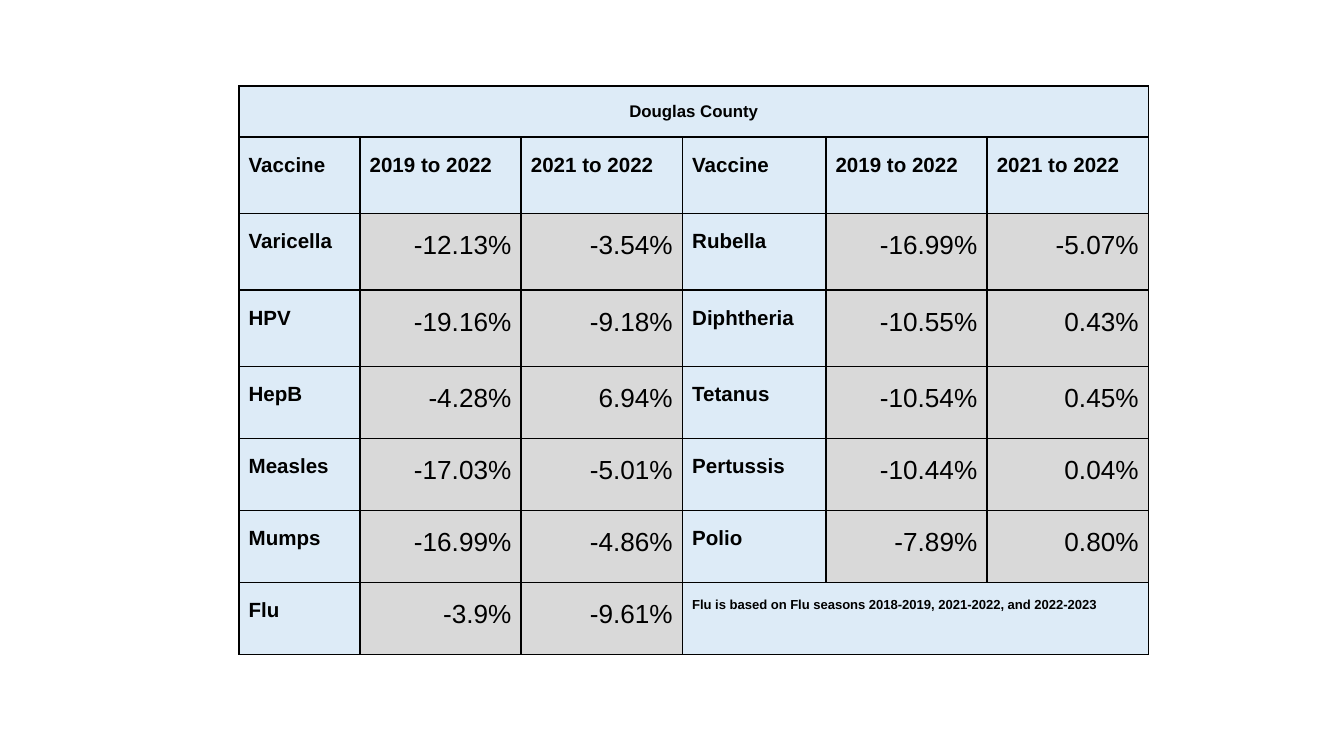
from lxml.etree import SubElement
from pptx import Presentation
from pptx.dml.color import RGBColor
from pptx.enum.text import MSO_ANCHOR, PP_ALIGN
from pptx.oxml.ns import qn
from pptx.util import Pt

# Content
COUNTY = "Douglas County"
HEADERS = ["Vaccine", "2019 to 2022", "2021 to 2022"]
LEFT_VACCINES = [
    ("Varicella", "-12.13%", "-3.54%"),
    ("HPV", "-19.16%", "-9.18%"),
    ("HepB", "-4.28%", "6.94%"),
    ("Measles", "-17.03%", "-5.01%"),
    ("Mumps", "-16.99%", "-4.86%"),
    ("Flu", "-3.9%", "-9.61%"),
]
RIGHT_VACCINES = [
    ("Rubella", "-16.99%", "-5.07%"),
    ("Diphtheria", "-10.55%", "0.43%"),
    ("Tetanus", "-10.54%", "0.45%"),
    ("Pertussis", "-10.44%", "0.04%"),
    ("Polio", "-7.89%", "0.80%"),
]
FOOTNOTE = "Flu is based on Flu seasons 2018-2019, 2021-2022, and 2022-2023"

THEME = {
    "font": "Arial", "text": "000000", "border": "000000",
    "label_fill": "DDEBF7", "value_fill": "D9D9D9",
    "county_size": 9, "label_size": 11, "value_size": 14, "note_size": 7,
}

# Layout, in points
SLIDE_SIZE = (720, 405)
TABLE_ORIGIN = (128, 46)
COLUMN_WIDTHS = [64.8, 86.4, 86.4, 76.8, 86.4, 86.4]
ROW_HEIGHTS = [27.3] + [41] * 3 + [38.6] * 4
MARGIN_X, MARGIN_Y = 5.2, 7.2
BORDER_WIDTH = 1


def add_borders(cell):
    properties = cell._tc.get_or_add_tcPr()
    for side in ("a:lnL", "a:lnR", "a:lnT", "a:lnB"):
        line = SubElement(properties, qn(side), w=str(Pt(BORDER_WIDTH)))
        fill = SubElement(line, qn("a:solidFill"))
        SubElement(fill, qn("a:srgbClr"), val=THEME["border"])


def write_text(cell, text, size=THEME["label_size"], bold=True, align=PP_ALIGN.LEFT):
    paragraph = cell.text_frame.paragraphs[0]
    paragraph.alignment = align
    paragraph.line_spacing = 1.15
    run = paragraph.add_run()
    run.text = text
    run.font.name = THEME["font"]
    run.font.size = Pt(size)
    run.font.bold = bold
    run.font.color.rgb = RGBColor.from_string(THEME["text"])


def fill_group(table, first_column, vaccines):
    """Write the headers and one row per vaccine: a label and two values."""
    for offset, header in enumerate(HEADERS):
        write_text(table.cell(1, first_column + offset), header)
    for row, (vaccine, *changes) in enumerate(vaccines, start=2):
        write_text(table.cell(row, first_column), vaccine)
        for column, change in enumerate(changes, start=first_column + 1):
            cell = table.cell(row, column)
            cell.fill.fore_color.rgb = RGBColor.from_string(THEME["value_fill"])
            write_text(cell, change, size=THEME["value_size"], bold=False,
                       align=PP_ALIGN.RIGHT)


def main():
    presentation = Presentation()
    presentation.slide_width, presentation.slide_height = map(Pt, SLIDE_SIZE)
    slide = presentation.slides.add_slide(presentation.slide_layouts[6])

    # Table grid
    table = slide.shapes.add_table(
        len(ROW_HEIGHTS), len(COLUMN_WIDTHS), *map(Pt, TABLE_ORIGIN),
        Pt(sum(COLUMN_WIDTHS)), Pt(sum(ROW_HEIGHTS))).table
    table.horz_banding = False
    for column, width in zip(table.columns, COLUMN_WIDTHS):
        column.width = Pt(width)
    for row, height in zip(table.rows, ROW_HEIGHTS):
        row.height = Pt(height)

    # Base look of every cell
    for cell in table.iter_cells():
        cell.margin_left = cell.margin_right = Pt(MARGIN_X)
        cell.margin_top = cell.margin_bottom = Pt(MARGIN_Y)
        cell.vertical_anchor = MSO_ANCHOR.TOP
        add_borders(cell)
        cell.fill.solid()
        cell.fill.fore_color.rgb = RGBColor.from_string(THEME["label_fill"])

    # County heading across the table
    last_row, last_column = len(ROW_HEIGHTS) - 1, len(COLUMN_WIDTHS) - 1
    heading = table.cell(0, 0)
    heading.merge(table.cell(0, last_column))
    write_text(heading, COUNTY, size=THEME["county_size"], align=PP_ALIGN.CENTER)

    # Two vaccine groups side by side
    right_start = len(HEADERS)
    fill_group(table, 0, LEFT_VACCINES)
    fill_group(table, right_start, RIGHT_VACCINES)

    # Footnote under the right group
    note = table.cell(last_row, right_start)
    note.merge(table.cell(last_row, last_column))
    write_text(note, FOOTNOTE, size=THEME["note_size"])

    presentation.save("out.pptx")


if __name__ == "__main__":
    main()
